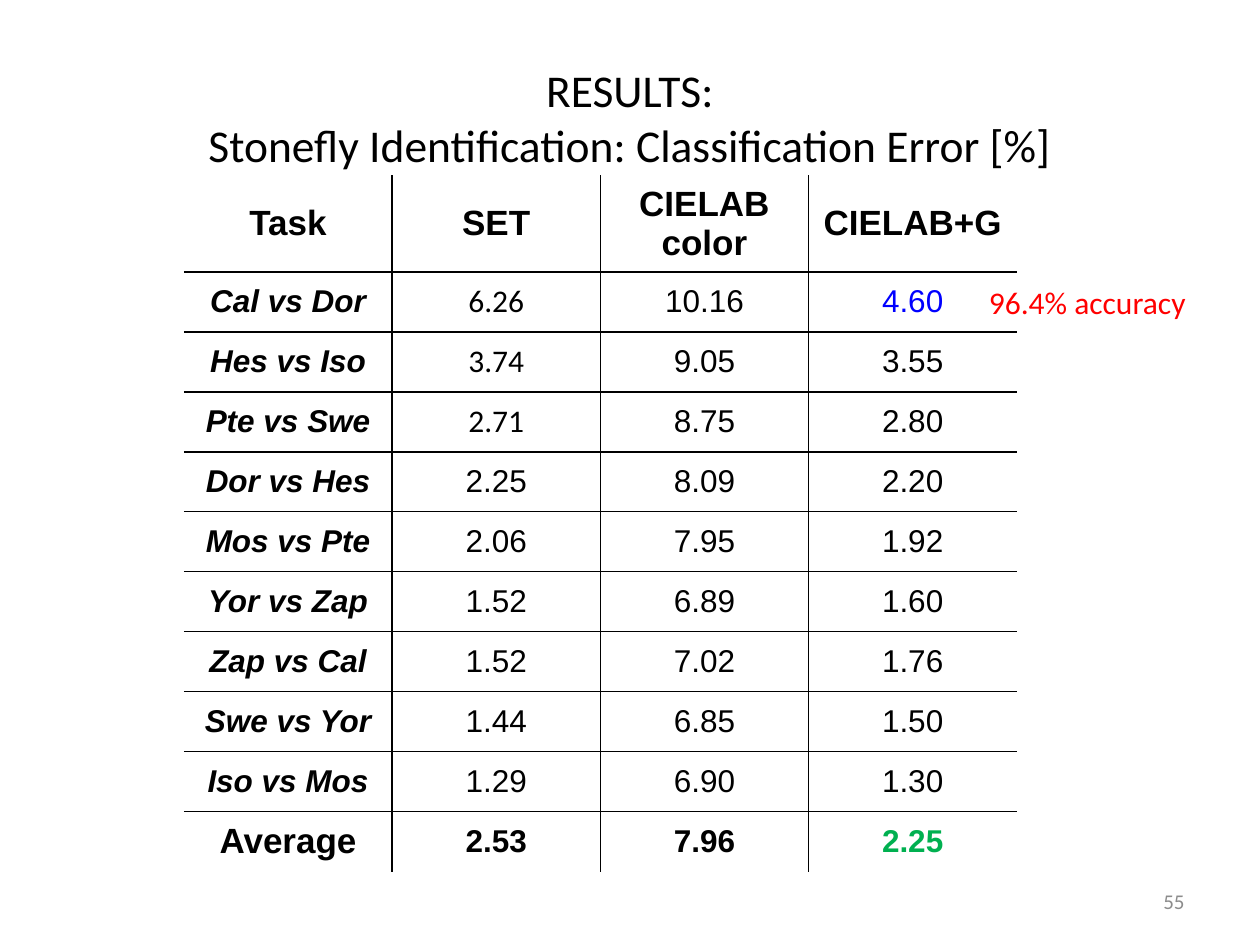
from dataclasses import dataclass

import pptx
import pptx.dml.color
import pptx.enum.text
import pptx.oxml
import pptx.oxml.ns
import pptx.util
from pptx.util import Inches

ALIGN = pptx.enum.text.PP_ALIGN
ANCHOR = pptx.enum.text.MSO_ANCHOR


@dataclass(frozen=True)
class Theme:
    black: str = "000000"
    grey: str = "8C8C8C"
    red: str = "FF0000"
    blue: str = "0000FF"
    green: str = "00B050"
    sans: str = "Calibri"
    table_font: str = "Arial"
    title: int = 26
    heading: int = 20
    body: int = 18
    small: int = 12
    rule: int = 1
    plain_table: str = "{2D5ABB26-0587-4C30-8999-92F81FD0307C}"


THEME = Theme()

ROWS = [
    ("Task", "SET", "CIELAB color", "CIELAB+G"),
    ("Cal vs Dor", "6.26", "10.16", "4.60"),
    ("Hes vs Iso", "3.74", "9.05", "3.55"),
    ("Pte vs Swe", "2.71", "8.75", "2.80"),
    ("Dor vs Hes", "2.25", "8.09", "2.20"),
    ("Mos vs Pte", "2.06", "7.95", "1.92"),
    ("Yor vs Zap", "1.52", "6.89", "1.60"),
    ("Zap vs Cal", "1.52", "7.02", "1.76"),
    ("Swe vs Yor", "1.44", "6.85", "1.50"),
    ("Iso vs Mos", "1.29", "6.90", "1.30"),
    ("Average", "2.53", "7.96", "2.25"),
]
LAST_ROW = len(ROWS) - 1
LAST_COLUMN = len(ROWS[0]) - 1
CALIBRI_CELLS = {(1, 1), (2, 1), (3, 1)}
CELL_COLOURS = {(1, 3): THEME.blue, (LAST_ROW, 3): THEME.green}


def style_text(frame, align, size, colour, font=THEME.sans, bold=False, italic=False):
    for para in frame.paragraphs:
        para.alignment = align
        for span in para.runs:
            span.font.name = font
            span.font.size = pptx.util.Pt(size)
            span.font.bold = bold
            span.font.italic = italic
            span.font.color.rgb = pptx.dml.color.RGBColor.from_string(colour)


def add_text(page, box, text, align, size, colour, anchor=ANCHOR.MIDDLE, wrap=True):
    frame = page.shapes.add_textbox(*map(Inches, box)).text_frame
    frame.word_wrap = wrap
    frame.vertical_anchor = anchor
    frame.text = text
    style_text(frame, align, size, colour)


def add_inner_rules(cell, row, column):
    """Rule only the sides that the cell shares with a neighbour."""
    shared = {
        "lnL": column > 0,
        "lnR": column < LAST_COLUMN,
        "lnT": row > 0,
        "lnB": row < LAST_ROW,
    }
    properties = cell._tc.get_or_add_tcPr()
    for side, visible in shared.items():
        if visible:
            properties.append(pptx.oxml.parse_xml(
                f'<a:{side} {pptx.oxml.ns.nsdecls("a")} w="{pptx.util.Pt(THEME.rule)}">'
                f'<a:solidFill><a:srgbClr val="{THEME.black}"/></a:solidFill></a:{side}>'
            ))


def add_error_table(page, box, header_height):
    left, top, width, height = box
    table = page.shapes.add_table(
        len(ROWS), len(ROWS[0]), *map(Inches, box)).table
    table.first_row = table.horz_banding = False
    table._tbl.tblPr.find(pptx.oxml.ns.qn("a:tableStyleId")).text = THEME.plain_table

    for column in table.columns:
        column.width = Inches(width / len(ROWS[0]))
    for index, row in enumerate(table.rows):
        row.height = Inches((height - header_height) / LAST_ROW if index else header_height)

    for row, values in enumerate(ROWS):
        edge_row = row in (0, LAST_ROW)
        for column, value in enumerate(values):
            cell = table.cell(row, column)
            cell.text = value
            cell.vertical_anchor = ANCHOR.MIDDLE
            is_heading = row == 0 or (row == LAST_ROW and column == 0)
            style_text(
                cell.text_frame, ALIGN.CENTER,
                THEME.heading if is_heading else THEME.body,
                CELL_COLOURS.get((row, column), THEME.black),
                THEME.sans if (row, column) in CALIBRI_CELLS else THEME.table_font,
                bold=edge_row or column == 0,
                italic=column == 0 and not edge_row,
            )
            add_inner_rules(cell, row, column)
            cell.fill.background()


def build_results_slide(deck):
    page = deck.slides.add_slide(deck.slide_layouts[6])
    add_text(page, (0.5, 0.3, 9, 1.25),
             "RESULTS:\vStonefly Identification: Classification Error [%]",
             ALIGN.CENTER, THEME.title, THEME.black)
    add_text(page, (7.17, 6.95, 2.33, 0.4), "55", ALIGN.RIGHT, THEME.small, THEME.grey)
    add_error_table(page, (1.46, 1.39, 6.61, 5.48), header_height=0.72)
    add_text(page, (7.75, 2.2, 1.78, 0.4), "96.4% accuracy",
             ALIGN.LEFT, THEME.body, THEME.red, anchor=ANCHOR.TOP, wrap=False)


def main():
    deck = pptx.Presentation()
    deck.slide_width, deck.slide_height = Inches(10), Inches(7.5)
    build_results_slide(deck)
    deck.save("out.pptx")


if __name__ == "__main__":
    main()
